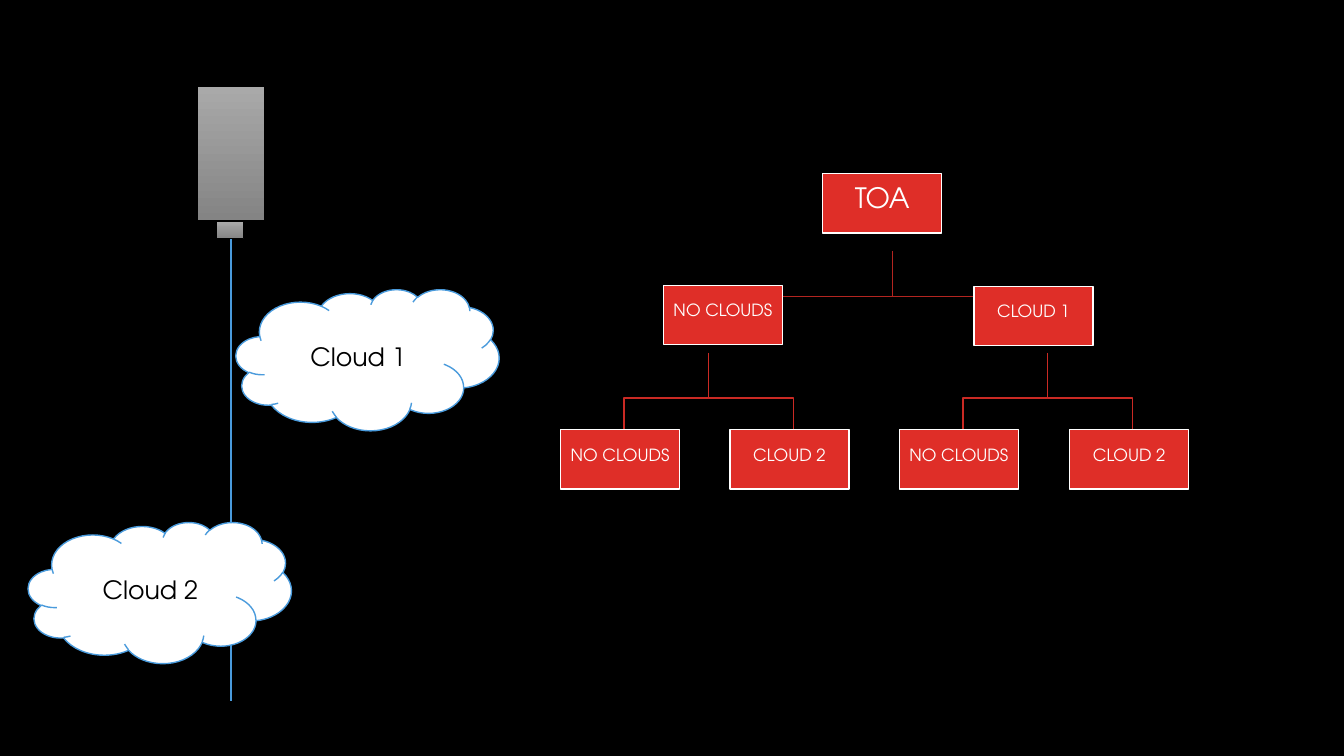
from typing import NamedTuple

from lxml import etree
from pptx import Presentation, util as u
from pptx.dml.color import RGBColor
from pptx.enum import shapes, text
from pptx.oxml.ns import qn

PX = 9144
FONT = "TeX Gyre Adventor"
COLORS = {
    "black": "000000",
    "white": "FFFFFF",
    "blue": "4A9BDC",
    "red": "DF2E28",
    "upper_branch": "B32520",
    "lower_branch": "CA2A24",
    "metal_light": "A9A9A9",
    "metal_dark": "848484",
}


class Rect(NamedTuple):
    x: int
    y: int
    w: int
    h: int


class Node(NamedTuple):
    label: str
    x: int
    y: int
    size: int = 12


class Branch(NamedTuple):
    stem: int
    top: int
    reach: int
    color: str


class Cloud(NamedTuple):
    label: str
    x: int
    y: int


LEAF_Y = 426
NODES = [
    Node("TOA", 816, 172, 20),
    Node("NO CLOUDS", 658, 283),
    Node("CLOUD 1", 966, 284),
    Node("NO CLOUDS", 556, LEAF_Y),
    Node("CLOUD 2", 724, LEAF_Y),
    Node("NO CLOUDS", 892, LEAF_Y),
    Node("CLOUD 2", 1061, LEAF_Y),
]
BRANCHES = [
    Branch(885, 249, 168, "upper_branch"),
    Branch(703, 350, 84, "lower_branch"),
    Branch(1039, 350, 84, "lower_branch"),
]
CLOUDS = [Cloud("Cloud 1", 234, 287), Cloud("Cloud 2", 28, 518)]
INSTRUMENT = [Rect(196, 86, 66, 133), Rect(215, 220, 27, 17)]


def rgb(name: str) -> RGBColor:
    return RGBColor.from_string(COLORS[name])


def set_line(s, color: str, width: float) -> None:
    s.line.color.rgb = rgb(color)
    s.line.width = u.Pt(width)


def add_shape(slide, kind, rect: Rect, line: str, width: float = 1):
    s = slide.shapes.add_shape(kind, *(v * PX for v in rect))
    s.shadow.inherit = False
    set_line(s, line, width)
    return s


def fill_solid(s, color: str) -> None:
    s.fill.solid()
    s.fill.fore_color.rgb = rgb(color)


def set_label(s, label: str, size: int, color: str):
    tf = s.text_frame
    tf.word_wrap = True
    tf.vertical_anchor = text.MSO_ANCHOR.MIDDLE
    p = tf.paragraphs[0]
    p.text = label
    p.alignment = text.PP_ALIGN.CENTER
    p.font.name = FONT
    p.font.size = u.Pt(size)
    p.font.color.rgb = rgb(color)
    return tf


def add_beam(slide, x: int, top: int, bottom: int) -> None:
    s = slide.shapes.add_connector(
        shapes.MSO_CONNECTOR.STRAIGHT, x * PX, top * PX, x * PX, bottom * PX
    )
    set_line(s, "blue", 1.5)
    etree.SubElement(s._element.spPr, qn("a:effectLst"))


def add_branch(slide, branch: Branch) -> None:
    bend, end = branch.top + 45, branch.top + 77
    for side in (1, -1):
        x = branch.stem + side * branch.reach
        path = slide.shapes.build_freeform(branch.stem, branch.top, scale=PX)
        path.add_line_segments([(branch.stem, bend), (x, bend), (x, end)], close=False)
        s = path.convert_to_shape()
        s.shadow.inherit = False
        s.fill.background()
        set_line(s, branch.color, 1)


def add_node(slide, node: Node) -> None:
    rect = Rect(node.x, node.y, 118, 59)
    s = add_shape(slide, shapes.MSO_SHAPE.RECTANGLE, rect, "white")
    fill_solid(s, "red")
    tf = set_label(s, node.label, node.size, "white")
    tf.margin_left = tf.margin_right = tf.margin_top = PX
    tf.margin_bottom = 8 * PX
    p = tf.paragraphs[0]
    p.line_spacing = 0.9
    p.space_after = u.Pt(node.size * 0.35)


def add_cloud(slide, cloud: Cloud) -> None:
    rect = Rect(cloud.x, cloud.y, 261, 140)
    s = add_shape(slide, shapes.MSO_SHAPE.CLOUD, rect, "blue")
    fill_solid(s, "white")
    set_label(s, cloud.label, 18, "black")


def add_metal(slide, rect: Rect) -> None:
    s = add_shape(slide, shapes.MSO_SHAPE.RECTANGLE, rect, "black", 0.75)
    s.fill.gradient()
    s.fill.gradient_angle = 270
    for stop, color in zip(s.fill.gradient_stops, ("metal_light", "metal_dark")):
        stop.color.rgb = rgb(color)


def main() -> None:
    prs = Presentation()
    prs.slide_width = 1333 * PX
    prs.slide_height = 750 * PX
    slide = prs.slides.add_slide(prs.slide_layouts[6])
    fill_solid(slide.background, "black")

    add_beam(slide, 229, 236, 695)
    for branch in BRANCHES:
        add_branch(slide, branch)
    for node in NODES:
        add_node(slide, node)
    for cloud in CLOUDS:
        add_cloud(slide, cloud)
    for rect in INSTRUMENT:
        add_metal(slide, rect)

    prs.save("out.pptx")


if __name__ == "__main__":
    main()
